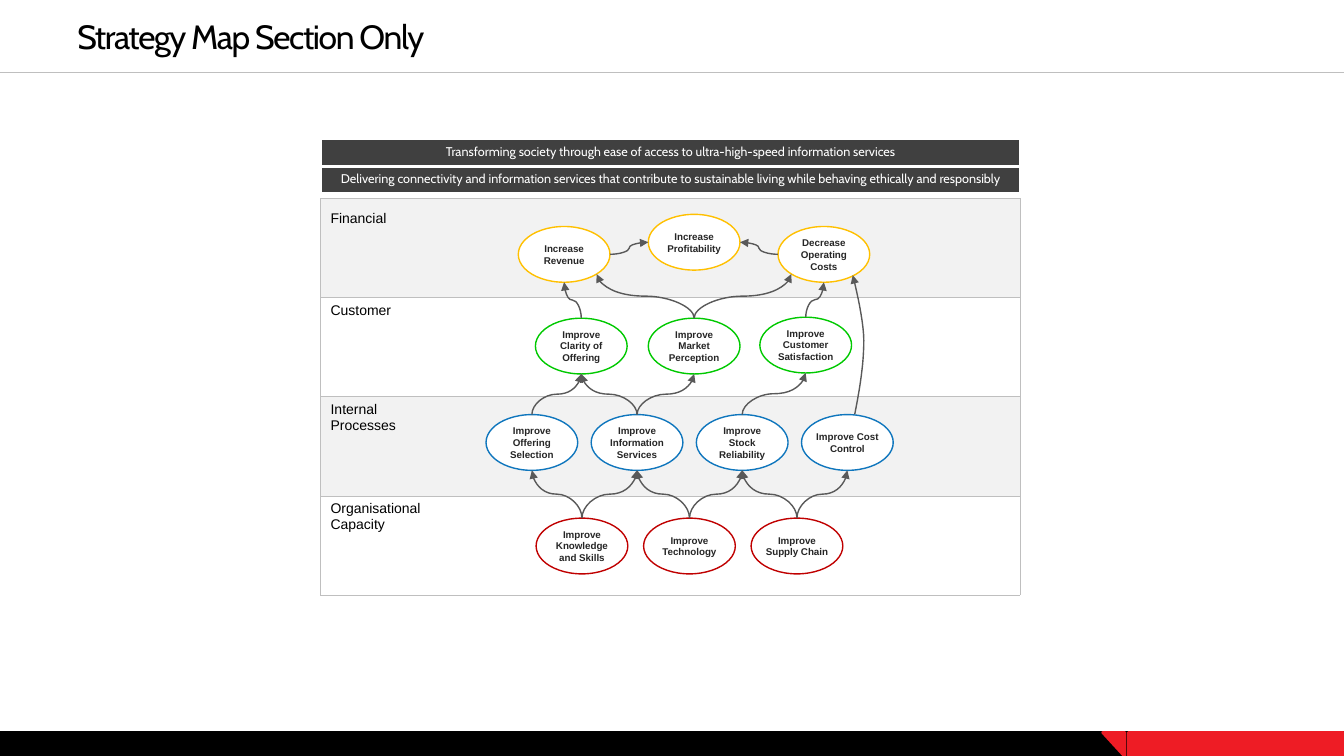
from dataclasses import dataclass

from lxml import etree
from pptx import Presentation
from pptx.dml.color import RGBColor
from pptx.enum.shapes import MSO_CONNECTOR, MSO_SHAPE
from pptx.enum.text import MSO_ANCHOR, MSO_AUTO_SIZE, PP_ALIGN
from pptx.oxml.ns import qn
from pptx.util import Inches, Pt

CURVE, STRAIGHT = MSO_CONNECTOR.CURVE, MSO_CONNECTOR.STRAIGHT
OVAL, RECTANGLE, WEDGE = MSO_SHAPE.OVAL, MSO_SHAPE.RECTANGLE, MSO_SHAPE.RIGHT_TRIANGLE
MIDDLE, CENTER, LEFT = MSO_ANCHOR.MIDDLE, PP_ALIGN.CENTER, PP_ALIGN.LEFT
NO_FIT = MSO_AUTO_SIZE.NONE

# Connection sites of an ellipse: index and offset from its centre in ellipse sizes
SITES = {
    "top": (0, 0, -0.5),
    "left": (2, -0.5, 0),
    "lower left": (3, -0.354, 0.354),
    "bottom": (4, 0, 0.5),
    "lower right": (5, 0.354, 0.354),
    "right": (6, 0.5, 0),
}
GOAL_WIDTH, GOAL_HEIGHT = 2.73, 1.66


@dataclass(frozen=True)
class Theme:
    heading: str = "Cabin"
    body: str = "Arial"
    title_size: float = 24
    label_size: float = 10
    banner_size: float = 9
    goal_size: float = 7
    black: str = "000000"
    white: str = "FFFFFF"
    red: str = "EE1C25"
    rule: str = "BFBFBF"
    band: str = "F2F2F2"
    banner: str = "404040"
    goal_text: str = "262626"
    arrow: str = "595959"
    financial: str = "FFC000"
    customer: str = "00C900"
    internal: str = "0F76BD"
    capacity: str = "C00000"


def grid(cells):
    """Length of a number of grid cells; the slide is 40 columns by 22.5 rows."""
    return Inches(cells / 3)


def rgb(code):
    return RGBColor.from_string(code)


class StrategySlide:
    def __init__(self, slide, theme):
        self.slide, self.theme = slide, theme

    def style_text(self, paragraph, font, size, color, align, bold=False):
        paragraph.alignment = align
        paragraph.font.name, paragraph.font.size = font, Pt(size)
        paragraph.font.bold, paragraph.font.color.rgb = bold, rgb(color)

    def style_line(self, line, color, width, arrow=False):
        line.color.rgb, line.width = rgb(color), Pt(width)
        if arrow:
            etree.SubElement(line._ln, qn("a:tailEnd"), type="triangle")

    def title(self, text, left, top, width, height):
        heading = self.slide.shapes.title
        heading.left, heading.top = grid(left), grid(top)
        heading.width, heading.height = grid(width), grid(height)
        frame = heading.text_frame
        frame.text = text
        frame.auto_size, frame.vertical_anchor = NO_FIT, MIDDLE
        frame.margin_top = frame.margin_bottom = 0
        paragraph = frame.paragraphs[0]
        self.style_text(paragraph, self.theme.heading, self.theme.title_size,
                        self.theme.black, LEFT)
        paragraph.runs[0].font._element.set("spc", "-100")

    def shape(self, kind, left, top, width, height, fill, line, weight):
        shape = self.slide.shapes.add_shape(
            kind, grid(left), grid(top), grid(width), grid(height))
        shape.shadow.inherit = False
        shape.fill.solid()
        shape.fill.fore_color.rgb = rgb(fill)
        self.style_line(shape.line, line, weight)
        return shape

    def goal(self, text, x, y, color):
        """Ellipse centred on x, y."""
        ellipse = self.shape(OVAL, x - GOAL_WIDTH / 2, y - GOAL_HEIGHT / 2,
                             GOAL_WIDTH, GOAL_HEIGHT, self.theme.white, color, 1)
        frame = ellipse.text_frame
        frame.text = text
        frame.word_wrap, frame.vertical_anchor = True, MIDDLE
        frame.margin_left = frame.margin_right = frame.margin_top = frame.margin_bottom = 0
        self.style_text(frame.paragraphs[0], self.theme.body, self.theme.goal_size,
                        self.theme.goal_text, CENTER, bold=True)
        return ellipse

    def connector(self, kind, begin, end, color, arrow=False):
        link = self.slide.shapes.add_connector(
            kind, *(grid(value) for value in (*begin, *end)))
        self.style_line(link.line, color, 1, arrow)
        etree.SubElement(link._element.spPr, qn("a:effectLst"))
        return link

    def link(self, source, source_site, target, target_site):
        """Curved arrow glued to two goals; it leaves a top site upwards."""
        ends = []
        for (_, x, y), site in ((source, source_site), (target, target_site)):
            _, across, down = SITES[site]
            ends.append((x + across * GOAL_WIDTH, y + down * GOAL_HEIGHT))
        (x1, y1), (x2, y2) = ends
        if source_site == "top":
            middle_x, middle_y = (x1 + x2) / 2, (y1 + y2) / 2
            side = 1 if x2 > x1 else -1
            rise, reach = side * (y1 - y2) / 2, abs(x2 - x1) / 2
            curve = self.connector(CURVE, (middle_x + rise, middle_y + reach),
                                   (middle_x - rise, middle_y - reach),
                                   self.theme.arrow, arrow=True)
            curve._element.spPr.xfrm.rot = 90 if side == 1 else 270
        else:
            curve = self.connector(CURVE, *ends, self.theme.arrow, arrow=True)
        glue = curve._element.nvCxnSpPr.cNvCxnSpPr
        for tag, goal, site in (("a:stCxn", source, source_site),
                                ("a:endCxn", target, target_site)):
            etree.SubElement(glue, qn(tag), id=str(goal[0].shape_id),
                             idx=str(SITES[site][0]))

    def bezier_arrow(self, start, *segments, steps=12):
        points = [start]
        for first, second, end in segments:
            origin = points[-1]
            for step in range(1, steps + 1):
                t = step / steps
                points.append(tuple(
                    (1 - t) ** 3 * a + 3 * t * (1 - t) ** 2 * b + 3 * t * t * (1 - t) * c + t ** 3 * d
                    for a, b, c, d in zip(origin, first, second, end)))
        corners = [(grid(x), grid(y)) for x, y in points]
        builder = self.slide.shapes.build_freeform(*corners[0])
        builder.add_line_segments(corners[1:], close=False)
        path = builder.convert_to_shape()
        path.shadow.inherit = False
        path.fill.background()
        self.style_line(path.line, self.theme.arrow, 1, arrow=True)

    def table(self, texts, top, row_height, fills, border, weight, font, size, color, align):
        table = self.slide.shapes.add_table(
            len(texts), 1, grid(9.54), grid(top), grid(20.82),
            grid(row_height * len(texts))).table
        for row, text, fill in zip(table.rows, texts, fills):
            row.height = grid(row_height)
            cell = row.cells[0]
            cell.text = text
            self.style_text(cell.text_frame.paragraphs[0], font, size, color, align)
            properties = cell._tc.get_or_add_tcPr()
            for side in ("a:lnL", "a:lnR", "a:lnT", "a:lnB"):
                edge = etree.SubElement(properties, qn(side), w=str(Pt(weight)))
                paint = etree.SubElement(edge, qn("a:solidFill"))
                etree.SubElement(paint, qn("a:srgbClr"), val=border)
            cell.fill.solid()
            cell.fill.fore_color.rgb = rgb(fill)
        return table


def main():
    deck = Presentation()
    deck.slide_width, deck.slide_height = grid(40), grid(22.5)
    theme = Theme()
    page = StrategySlide(deck.slides.add_slide(deck.slide_layouts[5]), theme)

    page.shape(RECTANGLE, 0, 21.8, 40, 0.72, theme.black, theme.black, 2.08)
    page.connector(STRAIGHT, (0, 2.15), (40, 2.15), theme.rule)
    page.shape(RECTANGLE, 33.58, 21.8, 6.42, 0.72, theme.red, theme.red, 2.08)
    page.shape(WEDGE, 32.82, 21.8, 0.66, 0.72, theme.red, theme.red, 2.08).rotation = 180
    page.title("Strategy Map Section Only", 2, 0.12, 29.16, 1.9)

    perspectives = page.table(
        ["Financial", "Customer", "Internal\vProcesses", "Organisational\vCapacity"],
        5.91, 2.95, [theme.band, theme.white] * 2, theme.rule, 0.5,
        theme.body, theme.label_size, theme.black, LEFT)
    perspectives.cell(0, 0).margin_top = grid(0.36)

    goals = {}
    for color, items in (
        (theme.financial, [("Increase Revenue", 16.79, 7.57), ("Increase Profitability", 20.66, 7.21),
                           ("Decrease Operating Costs", 24.52, 7.57)]),
        (theme.customer, [("Improve Clarity of Offering", 17.3, 10.3), ("Improve Market Perception", 20.66, 10.3),
                          ("Improve Customer Satisfaction", 23.98, 10.27)]),
        (theme.internal, [(f"Improve {name}", 15.83 + 3.13 * i, 13.17) for i, name in enumerate(
            ("Offering Selection", "Information Services", "Stock Reliability", "Cost Control"))]),
        (theme.capacity, [(f"Improve {name}", 17.32 + 3.2 * i, 16.25) for i, name in enumerate(
            ("Knowledge and Skills", "Technology", "Supply Chain"))]),
    ):
        for text, x, y in items:
            goals[text] = (page.goal(text, x, y, color), x, y)

    (revenue, profit, costs, clarity, market, satisfaction,
     offering, information, stock, control, skills, technology, supply) = goals.values()
    page.link(revenue, "right", profit, "left")
    page.link(costs, "left", profit, "right")
    page.link(market, "top", revenue, "lower right")
    page.link(market, "top", costs, "lower left")
    for source, target in (
        (clarity, revenue), (satisfaction, costs), (offering, clarity), (information, clarity),
        (information, market), (stock, satisfaction), (skills, offering), (skills, information),
        (technology, information), (technology, stock), (supply, stock), (supply, control),
    ):
        page.link(source, "top", target, "bottom")
    page.bezier_arrow((25.44, 12.33), ((25.59, 11.58), (25.71, 10.83), (25.71, 10.14)),
                      ((25.71, 9.45), (25.38, 8.19), (25.38, 8.19)))

    page.table(
        ["Transforming society through ease of access to ultra-high-speed information services",
         "Delivering connectivity and information services that contribute to sustainable living "
         "while behaving ethically and responsibly"],
        4.14, 0.81, [theme.banner] * 2, theme.white, 2.25,
        theme.heading, theme.banner_size, theme.white, CENTER)
    deck.save("out.pptx")


if __name__ == "__main__":
    main()
